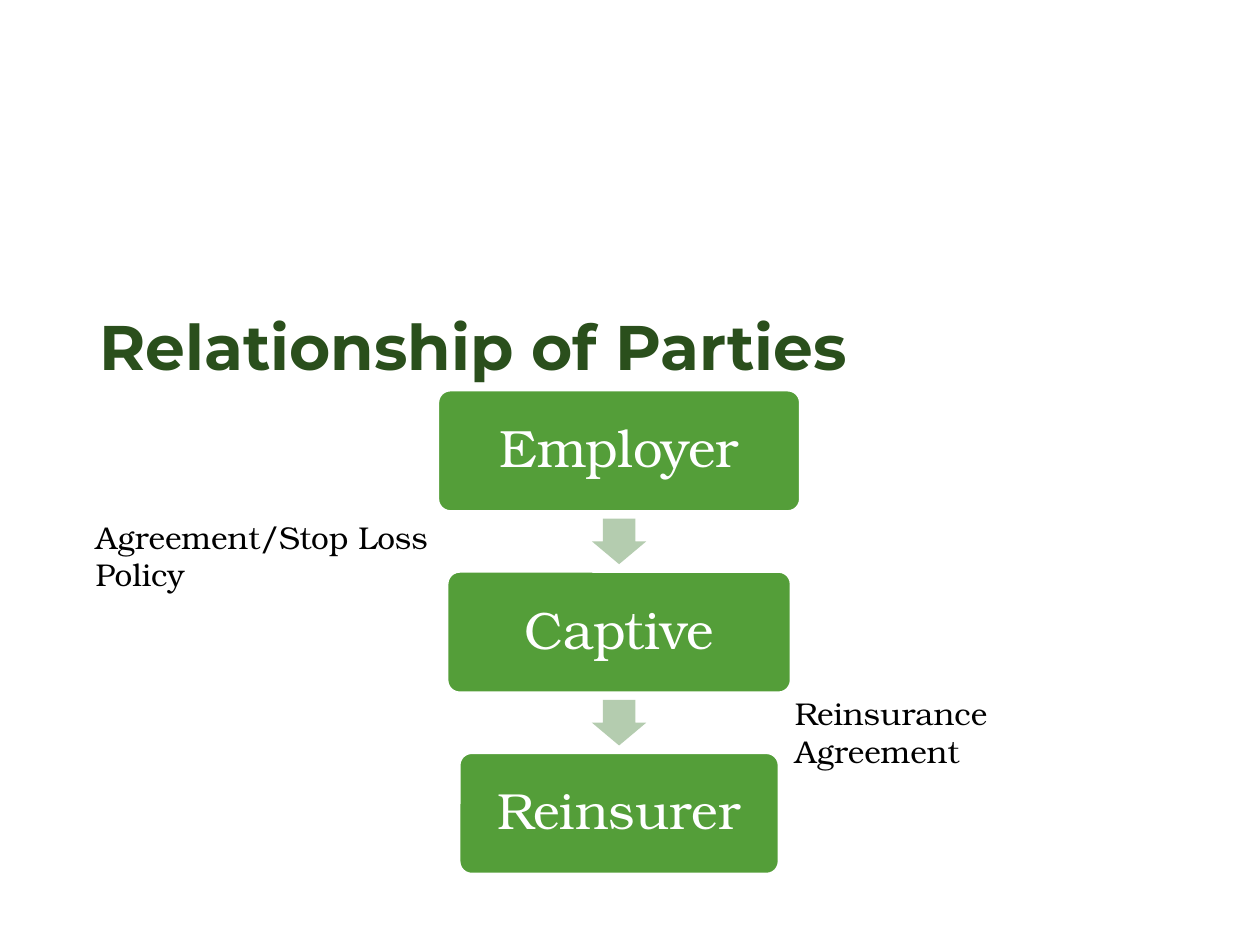
from dataclasses import dataclass

import pptx
import pptx.dml.color
import pptx.enum.shapes
import pptx.enum.text
import pptx.util

Pt = pptx.util.Pt
SHAPES = pptx.enum.shapes.MSO_SHAPE
ALIGN = pptx.enum.text.PP_ALIGN
ANCHOR = pptx.enum.text.MSO_ANCHOR

SERIF = "TeX Gyre Bonum"
WHITE = "FFFFFF"
CHAIN_CENTER = 353.8
CHAIN_TOP = 223.2
CHAIN_PITCH = 103.6
PARTY_HEIGHT = 68.8
ARROW_WIDTH, ARROW_HEIGHT = 31, 26


@dataclass
class Party:
    name: str
    width: float
    size: float


@dataclass
class Label:
    text: str
    left: float
    top: float
    width: float
    height: float
    size: float = 18
    font: str = SERIF
    color: str = "000000"
    bold: bool = False
    spacing: float = 1.0


PARTIES = [
    Party("Employer", 206.6, 30),
    Party("Captive", 196, 30),
    Party("Reinsurer", 182.2, 29),
]
LABELS = [
    Label("Relationship of Parties", 49.7, 177.1, 620.6, 45.4, 36,
          "Montserrat", "2A4F1C", True, 0.9),
    Label("Agreement/Stop Loss Policy", 47.5, 292.3, 251.3, 28.8),
    Label("Reinsurance Agreement", 447.1, 393.1, 213.8, 28.8),
]


def rgb(color: str) -> pptx.dml.color.RGBColor:
    return pptx.dml.color.RGBColor.from_string(color)


def add_run(paragraph, text: str, font: str, size: float, color: str, bold: bool = False) -> None:
    run = paragraph.add_run()
    run.text = text
    run.font.name = font
    run.font.size = Pt(size)
    run.font.bold = bold
    run.font.color.rgb = rgb(color)


def add_label(slide, label: Label) -> None:
    box = slide.shapes.add_textbox(Pt(label.left), Pt(label.top), Pt(label.width), Pt(label.height))
    box.text_frame.word_wrap = True
    paragraph = box.text_frame.paragraphs[0]
    paragraph.line_spacing = label.spacing
    add_run(paragraph, label.text, label.font, label.size, label.color, label.bold)


def add_centered(slide, kind, top: float, width: float, height: float, fill: str):
    shape = slide.shapes.add_shape(
        kind, Pt(CHAIN_CENTER - width / 2), Pt(top), Pt(width), Pt(height))
    shape.shadow.inherit = False
    shape.fill.solid()
    shape.fill.fore_color.rgb = rgb(fill)
    shape.line.fill.background()
    return shape


def add_party(slide, party: Party, top: float) -> None:
    card = add_centered(slide, SHAPES.ROUNDED_RECTANGLE, top, party.width, PARTY_HEIGHT, "549E39")
    card.adjustments[0] = 0.1
    card.line.color.rgb = rgb(WHITE)
    card.line.width = Pt(1)
    frame = card.text_frame
    frame.word_wrap = True
    frame.vertical_anchor = ANCHOR.MIDDLE
    paragraph = frame.paragraphs[0]
    paragraph.alignment = ALIGN.CENTER
    paragraph.line_spacing = 0.9
    add_run(paragraph, party.name, SERIF, party.size, WHITE)


def add_arrow(slide, top: float) -> None:
    arrow = add_centered(slide, SHAPES.DOWN_ARROW, top, ARROW_WIDTH, ARROW_HEIGHT, "B4CCAF")
    arrow.adjustments[0] = 0.6
    arrow.adjustments[1] = 0.5


def main() -> None:
    """Build the slide showing how employer, captive and reinsurer relate."""
    deck = pptx.Presentation()
    deck.slide_width, deck.slide_height = Pt(720), Pt(540)
    slide = deck.slides.add_slide(deck.slide_layouts[6])
    gap = CHAIN_PITCH - PARTY_HEIGHT
    for index, party in enumerate(PARTIES):
        top = CHAIN_TOP + index * CHAIN_PITCH
        if index:
            add_arrow(slide, top - (gap + ARROW_HEIGHT) / 2)
        add_party(slide, party, top)
    for label in LABELS:
        add_label(slide, label)
    deck.save("out.pptx")


if __name__ == "__main__":
    main()
